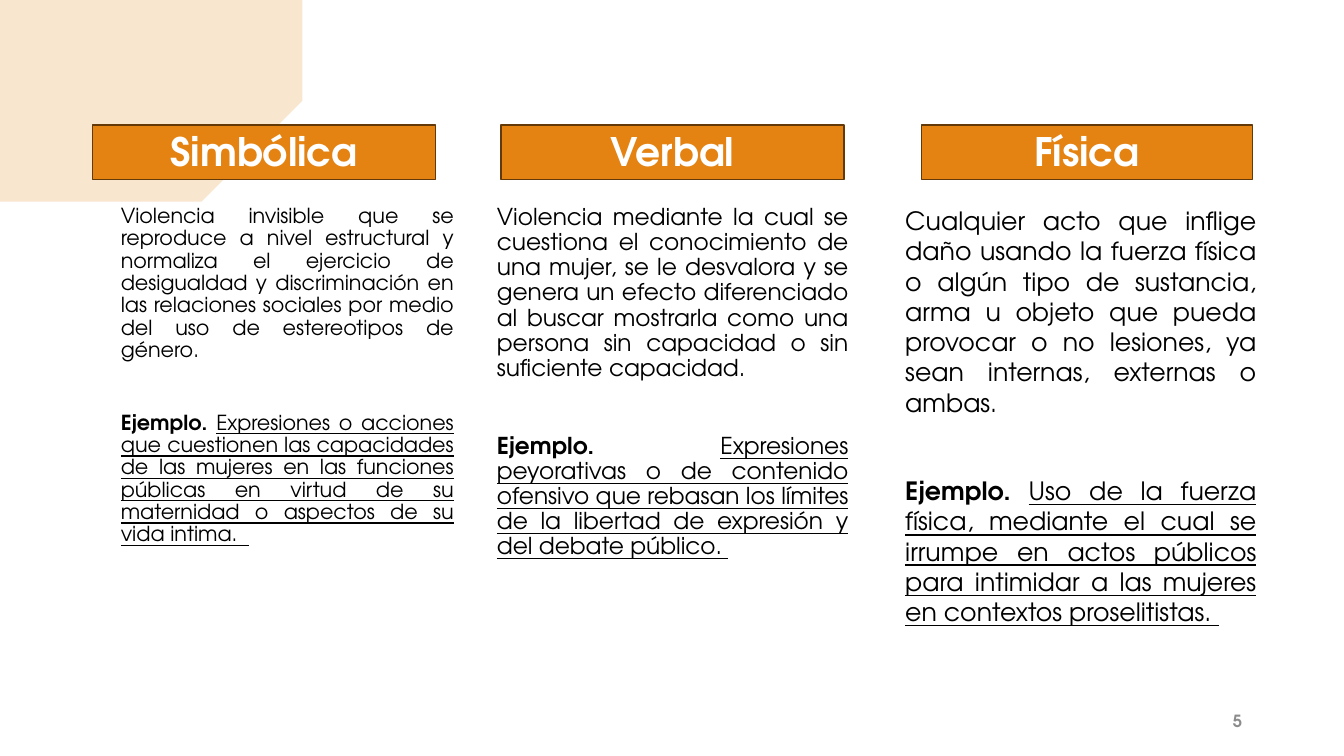
from dataclasses import dataclass

from lxml import etree
from pptx import Presentation, util as u
from pptx.dml.color import RGBColor
from pptx.enum import shapes, text
from pptx.oxml.ns import qn

# Each column: title, definition, example, (left, width) of bar and of body, size, line spacing
COLUMNS = [
    ("Simbólica",
     "Violencia invisible que se reproduce a nivel estructural y normaliza el ejercicio de "
     "desigualdad y discriminación en las relaciones sociales por medio del uso de "
     "estereotipos de género.",
     "Expresiones o acciones que cuestionen las capacidades de las mujeres en las funciones "
     "públicas en virtud de su maternidad o aspectos de su vida intima.  ",
     (0.92, 3.4), (1.1, 3.5), 14.8, 0.9),
    ("Verbal",
     "Violencia mediante la cual se cuestiona el conocimiento de una mujer, se le desvalora "
     "y se genera un efecto diferenciado al buscar mostrarla como una persona sin capacidad "
     "o sin suficiente capacidad.",
     "Expresiones peyorativas o de contenido ofensivo que rebasan los límites de la libertad "
     "de expresión y del debate público. ",
     (4.97, 3.4), (4.83, 3.68), 16.6, 0.9),
    ("Física",
     "Cualquier acto que inflige daño usando la fuerza física o algún tipo de sustancia, arma "
     "u objeto que pueda provocar o no lesiones, ya sean internas, externas o ambas.",
     "Uso de la fuerza física, mediante el cual se irrumpe en actos públicos para intimidar a "
     "las mujeres en contextos proselitistas. ",
     (9.14, 3.28), (8.88, 3.68), 18, 1.0),
]
EXAMPLE_LABEL = "Ejemplo. "
PAGE_NUMBER = "5"
BAR_ROW = (1.24, 0.54)
BODY_ROW = (1.99, 4.57)
NUMBER_BOX = (9.42, 6.95, 3, 0.4)

# Outline of the brush stroke, in inches, clockwise from the top left
BRUSH = [
    (0, 0.34), (0.06, 0.35), (0.25, 0.37), (0.66, 0.38), (1.02, 0.37), (1.51, 0.38),
    (1.94, 0.41), (2.48, 0.41), (2.66, 0.41), (2.74, 0.43), (2.8, 0.47), (2.71, 0.49),
    (2.55, 0.54), (2.53, 0.57), (2.56, 0.59), (2.62, 0.62), (2.48, 0.62), (2.38, 0.66),
    (2.46, 0.68), (2.56, 0.7), (2.66, 0.71), (2.75, 0.74), (2.51, 0.75), (2.63, 0.78),
    (2.73, 0.81), (2.8, 0.82), (2.88, 0.83), (2.9, 0.85), (2.87, 0.88), (2.84, 0.88),
    (2.63, 0.88), (2.8, 0.91), (2.96, 0.92), (3.3, 0.94), (3.21, 0.97), (3.22, 1.03),
    (3.18, 1.06), (3.11, 1.07), (3.07, 1.11), (3, 1.13), (2.83, 1.16), (2.8, 1.2),
    (2.78, 1.25), (2.74, 1.28), (2.92, 1.27), (3.08, 1.28), (2.89, 1.33), (2.69, 1.38),
    (2.73, 1.42), (2.62, 1.44), (2.52, 1.48), (2.63, 1.48), (2.36, 1.6), (1.97, 1.72),
    (1.55, 1.8), (1.02, 1.88), (0.65, 1.91), (0.23, 1.9), (0.07, 1.89), (0, 1.88),
]


@dataclass(frozen=True)
class Theme:
    font: str = "TeX Gyre Adventor"
    orange: str = "E48312"
    edge: str = "643908"
    ink: str = "000000"
    white: str = "FFFFFF"
    gray: str = "8C8C8C"
    title: float = 28
    number: float = 12
    brush_alpha: float = 0.2
    gap: float = 20


THEME = Theme()


def paint(shape, color):
    shape.shadow.inherit = False
    shape.fill.solid()
    shape.fill.fore_color.rgb = RGBColor.from_string(color)


def add_run(para, words, size, color, bold=False, underline=False):
    span = para.add_run()
    span.text = words
    font = span.font
    font.name, font.size = THEME.font, u.Pt(size)
    font.bold, font.underline = bold, underline
    font.color.rgb = RGBColor.from_string(color)


def add_brush(page):
    builder = page.shapes.build_freeform(*BRUSH[0], scale=u.Inches(1))
    builder.add_line_segments(BRUSH[1:], close=True)
    brush = builder.convert_to_shape()
    paint(brush, THEME.orange)
    brush.line.fill.background()
    color = brush.fill._xPr.find(qn("a:solidFill"))[0]
    etree.SubElement(color, qn("a:alpha")).set("val", str(int(THEME.brush_alpha * 100000)))


def add_bar(page, title, left, width):
    top, height = BAR_ROW
    bar = page.shapes.add_shape(shapes.MSO_SHAPE.RECTANGLE,
                                *map(u.Inches, (left, top, width, height)))
    paint(bar, THEME.orange)
    bar.line.color.rgb = RGBColor.from_string(THEME.edge)
    bar.line.width = u.Pt(1)
    bar.text_frame.word_wrap = True
    bar.text_frame.vertical_anchor = text.MSO_ANCHOR.BOTTOM
    para = bar.text_frame.paragraphs[0]
    para.alignment = text.PP_ALIGN.CENTER
    para.line_spacing = 0.9
    add_run(para, title, THEME.title, THEME.white, bold=True)


def add_body(page, definition, example, left, width, size, spacing):
    top, height = BODY_ROW
    box = page.shapes.add_textbox(*map(u.Inches, (left, top, width, height)))
    frame = box.text_frame
    frame.word_wrap = True
    meaning, sample = frame.paragraphs[0], frame.add_paragraph()
    for para in (meaning, sample):
        para.alignment = text.PP_ALIGN.JUSTIFY
        para.line_spacing = spacing
    # One line of text plus the regular gap separates the two paragraphs
    sample.space_before = u.Pt(round(THEME.gap + 1.2 * size * spacing, 1))
    add_run(meaning, definition, size, THEME.ink)
    add_run(sample, EXAMPLE_LABEL, size, THEME.ink, bold=True)
    add_run(sample, example, size, THEME.ink, underline=True)


def add_number(page):
    box = page.shapes.add_textbox(*map(u.Inches, NUMBER_BOX))
    box.text_frame.word_wrap = True
    box.text_frame.vertical_anchor = text.MSO_ANCHOR.MIDDLE
    para = box.text_frame.paragraphs[0]
    para.alignment = text.PP_ALIGN.RIGHT
    add_run(para, PAGE_NUMBER, THEME.number, THEME.gray, bold=True)


def main():
    deck = Presentation()
    deck.slide_width, deck.slide_height = u.Inches(13.33), u.Inches(7.5)
    page = deck.slides.add_slide(deck.slide_layouts[6])
    add_brush(page)
    for title, definition, example, bar, body, size, spacing in COLUMNS:
        add_bar(page, title, *bar)
        add_body(page, definition, example, *body, size, spacing)
    add_number(page)
    deck.save("out.pptx")


if __name__ == "__main__":
    main()
